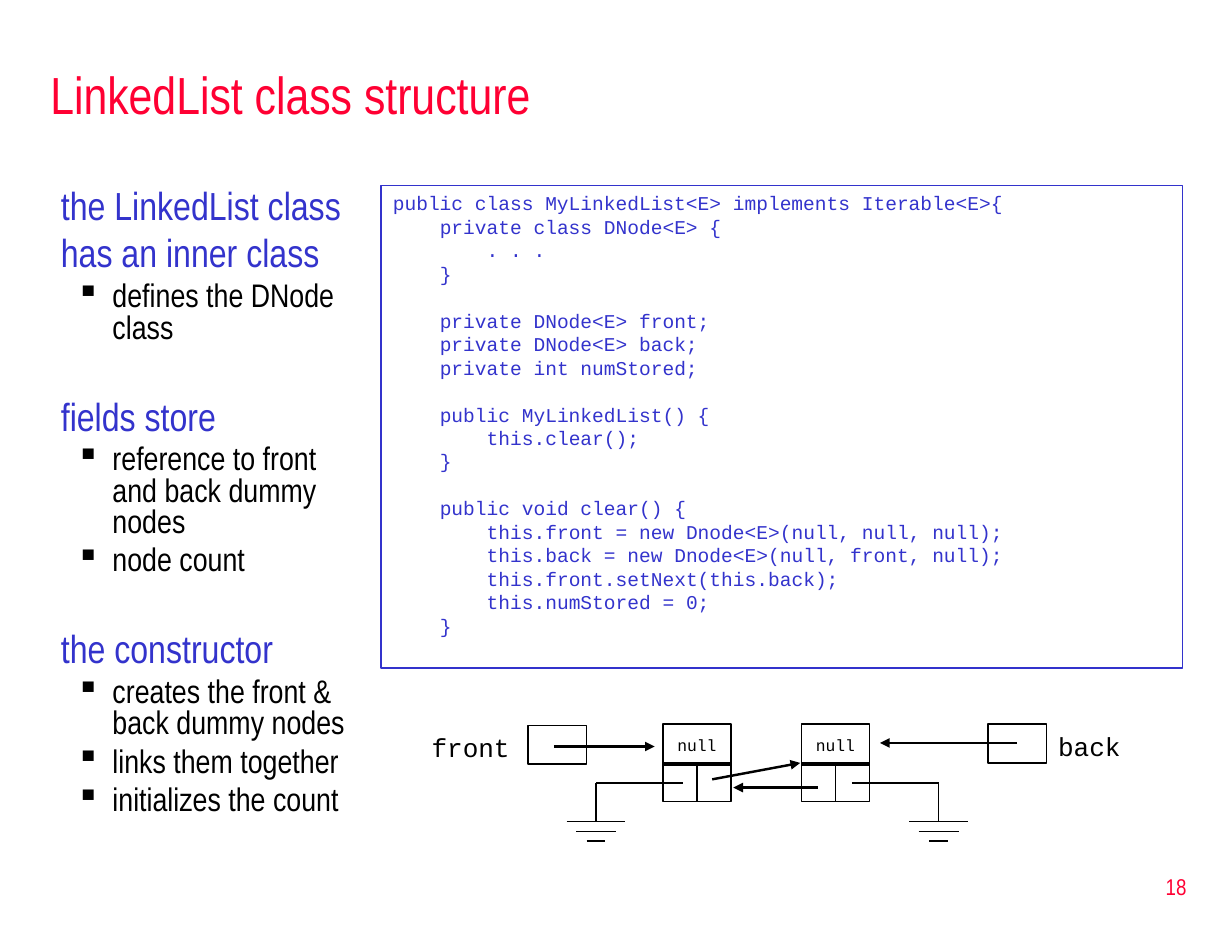
from pptx import Presentation
from pptx.dml.color import RGBColor
from pptx.enum import shapes, text
from pptx.oxml import ns
from pptx.util import Inches, Pt
from lxml import etree


class Theme:
    red = RGBColor(0xFF, 0x00, 0x33)
    blue = RGBColor(0x33, 0x33, 0xCC)
    black = RGBColor(0, 0, 0)
    sans, mono = "Arial Narrow", "Courier New"
    title, head, item, page = Pt(32), Pt(24), Pt(20), Pt(14)
    code, label, null = Pt(12), Pt(16), Pt(10)
    thin, thick = Pt(1), Pt(1.5)


show = Presentation()
show.slide_width, show.slide_height = Inches(10.5), Inches(8)
slide = show.slides.add_slide(show.slide_layouts[6])


def box(x, y, w, h, rows, edge=None, mid=True):
    """Add a box; rows are (words, font, size, colour, paragraph format, indent)."""
    area = [Inches(n) for n in (x, y, w, h)]
    if edge is None:
        shape = slide.shapes.add_textbox(*area)
    else:
        shape = slide.shapes.add_shape(shapes.MSO_SHAPE.RECTANGLE, *area)
        shape.shadow.inherit = False
        shape.fill.background()
        shape.line.color.rgb = edge
        shape.line.width = Theme.thin
    frame = shape.text_frame
    frame.word_wrap = True
    frame.vertical_anchor = text.MSO_ANCHOR.MIDDLE if mid else text.MSO_ANCHOR.TOP
    for i, (words, font, size, color, form, dent) in enumerate(rows):
        para = frame.add_paragraph() if i else frame.paragraphs[0]
        para.alignment = text.PP_ALIGN.LEFT
        for key, val in form.items():
            setattr(para, key, val)
        run = para.add_run()
        run.text = words
        run.font.name, run.font.size = font, size
        run.font.color.rgb = color
        prop = para._p.get_or_add_pPr()
        prop.set("marL", str(Inches(dent)))
        if font == Theme.sans and size == Theme.item:
            prop.set("indent", str(Inches(-0.31)))
            etree.SubElement(prop, ns.qn("a:buChar")).set("char", "▪")
    return shape


def line(x1, y1, x2, y2, arrow=False):
    link = slide.shapes.add_connector(
        shapes.MSO_CONNECTOR.STRAIGHT, *[Inches(n) for n in (x1, y1, x2, y2)])
    link.line.color.rgb = Theme.black
    link.line.width = Theme.thick if arrow else Theme.thin
    if arrow:
        tail = etree.SubElement(link.line._get_or_add_ln(), ns.qn("a:tailEnd"))
        tail.set("type", "triangle")
    etree.SubElement(link._element.spPr, ns.qn("a:effectLst"))
    return link


# Title and page number
box(0.33, 0.42, 9.92, 0.75,
    [("LinkedList class structure", Theme.sans, Theme.title, Theme.red, {}, 0)])
box(8.02, 7.29, 2.19, 0.53,
    [("18", Theme.sans, Theme.page, Theme.red, {"alignment": text.PP_ALIGN.RIGHT}, 0)])

# Outline
topics = [
    ("the LinkedList class has an inner class", ["defines the DNode class"]),
    ("fields store", ["reference to front and back dummy nodes", "node count"]),
    ("the constructor", ["creates the front & back dummy nodes",
                         "links them together", "initializes the count"]),
]
rows = []
for head, items in topics:
    gap = {"space_before": Pt(28.5 if rows else 4.8)}
    rows.append((head, Theme.sans, Theme.head, Theme.blue, gap, 0))
    for item in items:
        rows.append((item, Theme.sans, Theme.item, Theme.black,
                     {"line_spacing": 0.8, "space_before": Pt(4.3)}, 0.44))
box(0.42, 1.5, 2.75, 5.92, rows, mid=False)

# Code: blocks of (indent level, words), one blank line apart
blocks = [
    [(0, "public class MyLinkedList<E> implements Iterable<E>{"),
     (1, "private class DNode<E> {"),
     (2, ". . ."),
     (1, "}")],
    [(1, "private DNode<E> front;"),
     (1, "private DNode<E> back;"),
     (1, "private int numStored;")],
    [(1, "public MyLinkedList() {"),
     (2, "this.clear();"),
     (1, "}")],
    [(1, "public void clear() {"),
     (2, "this.front = new Dnode<E>(null, null, null);"),
     (2, "this.back = new Dnode<E>(null, front, null);"),
     (2, "this.front.setNext(this.back);"),
     (2, "this.numStored = 0;"),
     (1, "}")],
]
rows = []
for block in blocks:
    for i, (level, words) in enumerate(block):
        gap = {"space_before": Pt(14.4 if rows and i == 0 else 0)}
        rows.append((words, Theme.mono, Theme.code, Theme.blue, gap, 0.4 * level))
box(3.25, 1.58, 6.83, 4.11, rows, Theme.blue, mid=False)

# Front and back references
for name, x, ref, y in (("front", 3.58, 4.5, 6.18), ("back", 8.92, 8.42, 6.17)):
    box(x, y, 0.92, 0.37, [(name, Theme.mono, Theme.label, Theme.black, {}, 0)])
    box(ref, y, 0.5, 0.33, [], Theme.black)

# Dummy nodes, each with a grounded link
for x, port, earth in ((5.65, 5.82, 5.08), (6.83, 7.26, 8)):
    links = box(x, 6.5, 0.58, 0.33, [], Theme.black)
    box(x, 6.17, 0.58, 0.35,
        [("null", Theme.mono, Theme.null, Theme.black,
          {"alignment": text.PP_ALIGN.CENTER}, 0)], Theme.black)
    split = line(x + 0.29, 6.5, x + 0.29, 6.83)
    split.begin_connect(links, 0)
    split.end_connect(links, 2)
    line(port, 6.67, earth, 6.67)
    line(earth, 6.67, earth, 7)
    for i, half in enumerate((0.25, 0.17, 0.08)):
        y = 7 + i / 12
        line(earth - half, y, earth + half, y)

# Arrows between references and nodes
for ends in ((4.72, 6.36, 5.58, 6.36), (8.67, 6.33, 7.5, 6.33),
             (6.07, 6.64, 6.82, 6.5), (6.97, 6.71, 6.25, 6.71)):
    line(*ends, arrow=True)

show.save("out.pptx")
